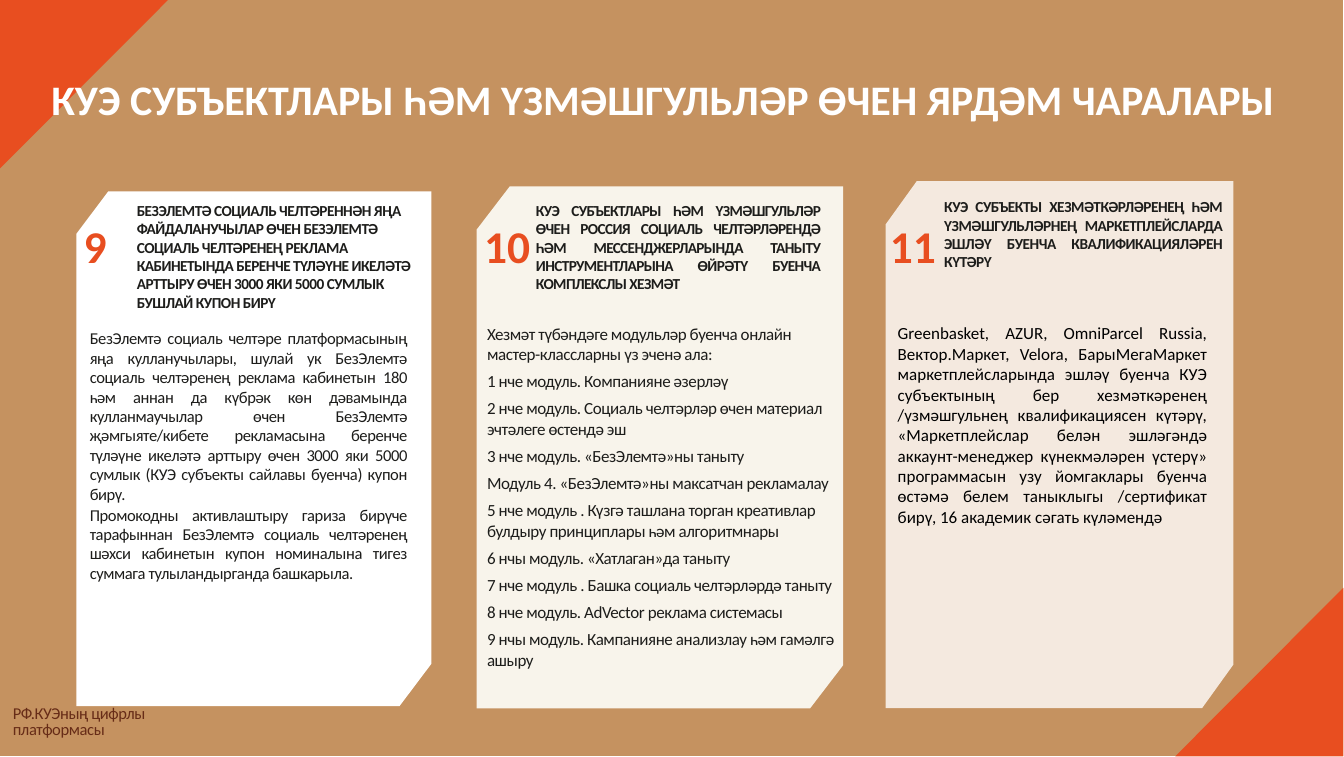
from dataclasses import dataclass
from typing import NamedTuple

from pptx import Presentation
from pptx.dml.color import RGBColor
from pptx.enum.text import MSO_ANCHOR, MSO_AUTO_SIZE, PP_ALIGN as Align
from pptx.util import Inches, Pt

WIDE, HIGH = Inches(21.99), Inches(12.38)
LEFT, FULL = Align.LEFT, Align.JUSTIFY


@dataclass(frozen=True)
class Theme:
    font: str = "Calibri"
    sand: str = "C59260"
    flame: str = "E84E20"
    white: str = "FFFFFF"
    cream: str = "F8F4EB"
    blush: str = "F4E9DF"
    ink: str = "1D1D1B"
    black: str = "000000"
    brown: str = "672C17"
    title: float = 49.5
    number: float = 53.5
    head: float = 18
    body: float = 20
    small: float = 19.5


class Box(NamedTuple):
    """Left, top, width and height in percent of the slide."""
    x: float
    y: float
    w: float
    h: float


class Inset(NamedTuple):
    left: float = 0.1
    top: float = 0.05
    right: float = 0.1
    bottom: float = 0.05


@dataclass(frozen=True)
class Style:
    size: float
    color: str
    bold: bool = False
    track: float = 0
    align: Align = LEFT
    before: float = 0
    lines: float | Pt | None = None
    inset: Inset = Inset()


@dataclass(frozen=True)
class Card:
    box: Box
    fill: str
    number: str
    spot: Box
    head: str
    head_box: Box
    head_style: Style
    body: tuple[str, ...]
    body_box: Box
    body_style: Style


T = Theme()
FLAT = Inset(0, 0.01, 0, 0)
TITLE = Style(T.title, T.white, True, before=0.9, inset=FLAT)
NUMBER = Style(T.number, T.flame, True, 0.2, before=1.1, inset=FLAT)
FOOT = Style(T.small, T.brown, track=-0.5, lines=Pt(19.2), inset=Inset(0, 0, 0, 0))

CARDS = (
    Card(
        Box(5.68, 25.28, 26.42, 68.01), T.white,
        "9", Box(6.23, 28.76, 3.55, 7.43),
        "БЕЗЭЛЕМТӘ СОЦИАЛЬ ЧЕЛТӘРЕННӘН ЯҢА ФАЙДАЛАНУЧЫЛАР ӨЧЕН БЕЗЭЛЕМТӘ "
        "СОЦИАЛЬ ЧЕЛТӘРЕНЕҢ РЕКЛАМА КАБИНЕТЫНДА БЕРЕНЧЕ ТҮЛӘҮНЕ ИКЕЛӘТӘ "
        "АРТТЫРУ ӨЧЕН 3000 ЯКИ 5000 СУМЛЫК БУШЛАЙ КУПОН БИРҮ",
        Box(9.73, 26.17, 22.97, 15.51), Style(T.head, T.ink, True, -0.6),
        ("БезЭлемтә социаль челтәре платформасының яңа кулланучылары, шулай ук "
         "БезЭлемтә социаль челтәренең реклама кабинетын 180 һәм аннан да күбрәк "
         "көн дәвамында кулланмаучылар өчен БезЭлемтә җәмгыяте/кибете рекламасына "
         "беренче түләүне икеләтә арттыру өчен 3000 яки 5000 сумлык (КУЭ субъекты "
         "сайлавы буенча) купон бирү.",
         "Промокодны активлаштыру гариза бирүче тарафыннан БезЭлемтә социаль "
         "челтәренең шәхси кабинетын купон номиналына тигез суммага "
         "тулыландырганда башкарыла."),
        Box(6.68, 43.3, 25.38, 34.49),
        Style(T.small, T.ink, False, -0.5, FULL, 1.3, 0.98, Inset(0, 0.02, 0.39, 0)),
    ),
    Card(
        Box(35.47, 24.64, 27.26, 68.94), T.cream,
        "10", Box(36.02, 28.76, 3.55, 7.43),
        "КУЭ СУБЪЕКТЛАРЫ ҺӘМ ҮЗМӘШГУЛЬЛӘР ӨЧЕН РОССИЯ СОЦИАЛЬ ЧЕЛТӘРЛӘРЕНДӘ "
        "ҺӘМ МЕССЕНДЖЕРЛАРЫНДА ТАНЫТУ ИНСТРУМЕНТЛАРЫНА ӨЙРӘТҮ БУЕНЧА "
        "КОМПЛЕКСЛЫ ХЕЗМӘТ",
        Box(39.43, 26.17, 22.06, 13.09), Style(T.head, T.ink, True, -0.7, FULL),
        ("Хезмәт түбәндәге модульләр буенча онлайн мастер-классларны үз эченә ала:",
         "1 нче модуль. Компанияне әзерләү",
         "2 нче модуль. Социаль челтәрләр өчен материал эчтәлеге өстендә эш",
         "3 нче модуль. «БезЭлемтә»ны таныту",
         "Модуль 4. «БезЭлемтә»ны максатчан рекламалау",
         "5 нче модуль . Күзгә ташлана торган креативлар булдыру принциплары "
         "һәм алгоритмнары",
         "6 нчы модуль. «Хатлаган»да таныту",
         "7 нче модуль . Башка социаль челтәрләрдә таныту",
         "8 нче модуль. AdVector реклама системасы",
         "9 нчы модуль. Кампанияне анализлау һәм гамәлгә ашыру"),
        Box(35.79, 42.25, 27.24, 49.84),
        Style(T.body, T.ink, track=-0.5, before=7.7, lines=1.01),
    ),
    Card(
        Box(65.89, 23.91, 25.88, 69.63), T.blush,
        "11", Box(66.21, 28.76, 3.55, 7.43),
        "КУЭ СУБЪЕКТЫ ХЕЗМӘТКӘРЛӘРЕНЕҢ ҺӘМ ҮЗМӘШГУЛЬЛӘРНЕҢ МАРКЕТПЛЕЙСЛАРДА "
        "ЭШЛӘҮ БУЕНЧА КВАЛИФИКАЦИЯЛӘРЕН КҮТӘРҮ",
        Box(69.8, 25.69, 21.6, 10.58), Style(T.head, T.ink, True, -0.5, FULL),
        ("Greenbasket, AZUR, OmniParcel Russia, Вектор.Маркет, Velora, "
         "БарыМегаМаркет маркетплейсларында эшләү буенча КУЭ субъектының бер "
         "хезмәткәренең /үзмәшгульнең квалификациясен күтәрү, «Маркетплейслар "
         "белән эшләгәндә аккаунт-менеджер күнекмәләрен үстерү» программасын узу "
         "йомгаклары буенча өстәмә белем таныклыгы /сертификат бирү, 16 академик "
         "сәгать күләмендә",),
        Box(66.35, 42.25, 23.92, 30.45), Style(T.body, T.black, align=FULL),
    ),
)


def across(share: float) -> int:
    return round(WIDE * share / 100)


def down(share: float) -> int:
    return round(HIGH * share / 100)


def draw(shapes, fill: str, *dots: tuple[float, float]) -> None:
    """Fill the outline through dots given in percent of the slide."""
    first, *rest = [(across(x), down(y)) for x, y in dots]
    pen = shapes.build_freeform(*first)
    pen.add_line_segments(rest)
    form = pen.convert_to_shape()
    form.shadow.inherit = False
    form.fill.solid()
    form.fill.fore_color.rgb = RGBColor.from_string(fill)
    form.line.fill.background()


def panel(shapes, box: Box, fill: str) -> None:
    """Draw a card with its top left and bottom right corners cut."""
    x, y, w, h = box
    cut, drop, right, base = 0.09 * w, 0.0825 * h, x + w, y + h
    draw(shapes, fill, (right, y), (x + cut, y), (x, y + drop),
         (x, base), (right - cut, base), (right, base - drop))


def write(shape, box: Box, style: Style, *texts: str) -> None:
    """Place a text shape and fill it with one paragraph per text."""
    shape.left, shape.top = across(box.x), down(box.y)
    shape.width, shape.height = across(box.w), down(box.h)
    frame = shape.text_frame
    frame.word_wrap = True
    frame.auto_size = MSO_AUTO_SIZE.SHAPE_TO_FIT_TEXT
    frame.vertical_anchor = MSO_ANCHOR.TOP
    frame.margin_left, frame.margin_top, frame.margin_right, frame.margin_bottom = (
        Inches(side) for side in style.inset)
    for at, text in enumerate(texts):
        para = frame.add_paragraph() if at else frame.paragraphs[0]
        para.alignment = style.align
        para.space_before = Pt(style.before)
        para.line_spacing = style.lines
        run = para.add_run()
        run.text = text
        font = run.font
        font.name, font.size, font.bold = T.font, Pt(style.size), style.bold
        font.color.rgb = RGBColor.from_string(style.color)
        if style.track:
            run._r.get_or_add_rPr().set("spc", str(round(style.track * 100)))


def label(shapes, box: Box, style: Style, *texts: str) -> None:
    write(shapes.add_textbox(0, 0, 0, 0), box, style, *texts)


def main() -> None:
    deck = Presentation()
    deck.slide_width, deck.slide_height = WIDE, HIGH
    shapes = deck.slides.add_slide(deck.slide_layouts[5]).shapes
    end, base = 99.95, 99.9
    wing, rise = 12.5, 22.25
    draw(shapes, T.sand, (end, 0), (0, 0), (0, base), (end, base))
    draw(shapes, T.flame, (end, base - rise), (end - wing, base), (end, base))
    draw(shapes, T.flame, (wing, 0), (0, 0), (0, rise))
    for card in CARDS:
        panel(shapes, card.box, card.fill)
    label(shapes, Box(0.95, 93.3, 10.96, 4.36), FOOT, "РФ.КУЭның цифрлы платформасы")
    for card in CARDS:
        label(shapes, card.body_box, card.body_style, *card.body)
        label(shapes, card.head_box, card.head_style, card.head)
        label(shapes, card.spot, NUMBER, card.number)
    title = shapes.title
    write(title, Box(3.82, 9.61, 93.68, 6.87), TITLE,
          "КУЭ СУБЪЕКТЛАРЫ ҺӘМ ҮЗМӘШГУЛЬЛӘР ӨЧЕН ЯРДӘМ ЧАРАЛАРЫ")
    shapes._spTree.append(title._element)
    deck.save("out.pptx")


if __name__ == "__main__":
    main()
